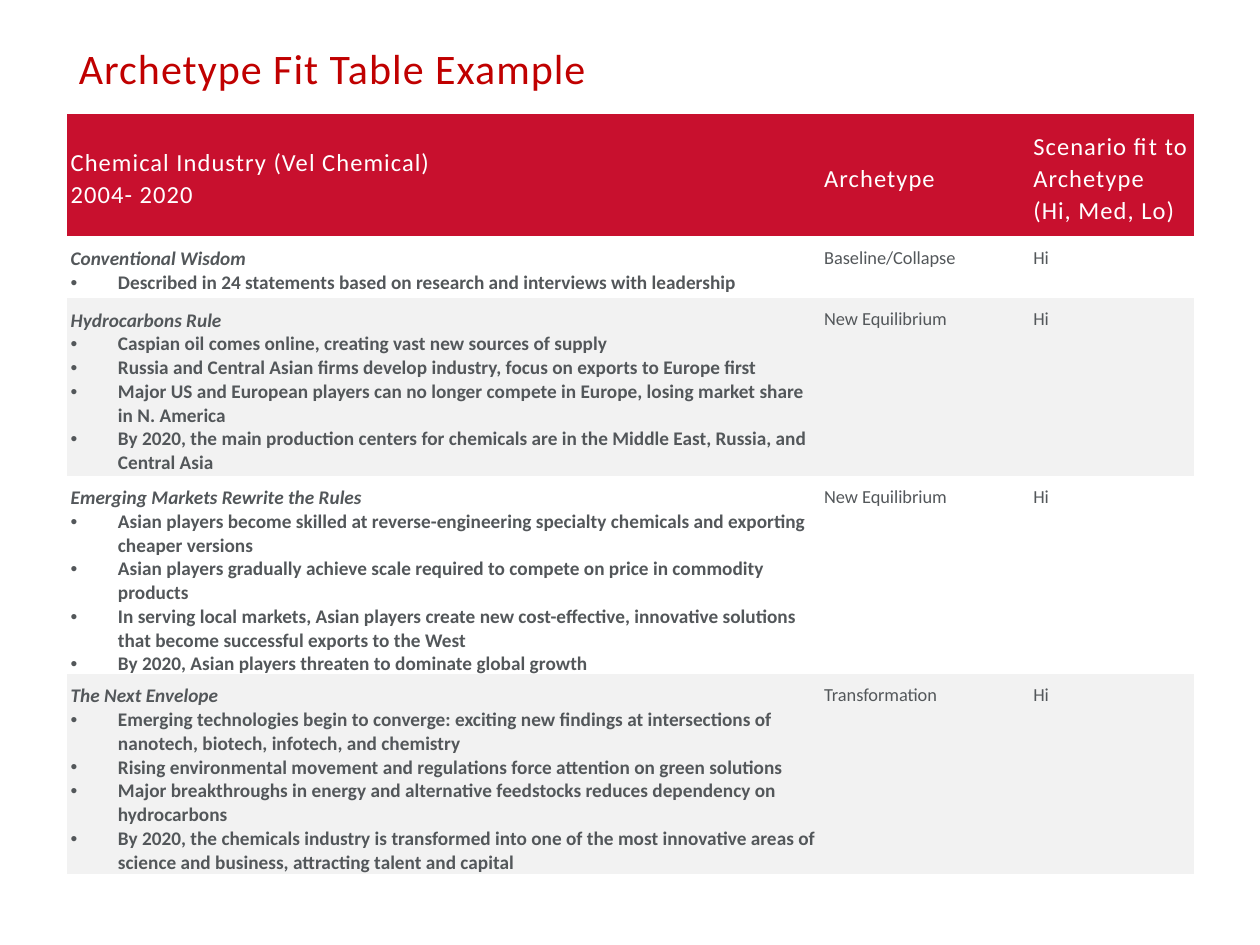
"""Build the archetype fit table slide."""
from copy import deepcopy
from dataclasses import dataclass

from lxml import etree
from pptx import Presentation
from pptx.dml.color import RGBColor
from pptx.enum.text import MSO_ANCHOR
from pptx.oxml.ns import qn
from pptx.util import Pt

MIDDLE = MSO_ANCHOR.MIDDLE
TOP = MSO_ANCHOR.TOP
PLAIN = "{2D5ABB26-0587-4C30-8999-92F81FD0307C}"


@dataclass(frozen=True)
class Theme:
    font: str = "Calibri"
    title: str = "C00000"
    head: str = "C8102E"
    light: str = "FFFFFF"
    ink: str = "53575A"
    band: str = "F2F2F2"
    big: float = 24
    mid: float = 14
    body: float = 11
    small: float = 10.5
    track: int = 60
    lead: float = 1.07
    indent: float = 27


@dataclass(frozen=True)
class Story:
    name: str
    points: tuple[str, ...]
    kind: str
    fit: str = "Hi"


THEME = Theme()
LEFT, WIDE = 38, 644.4
COLS = (430.6, 119.5, 94.3)
ROWS = (69.8, 35.3, 101.5, 101.5, 114.5)
HEADS = (
    ("Chemical Industry (Vel Chemical)\v2004- 2020",),
    ("Archetype",),
    ("Scenario fit to Archetype", "(Hi, Med, Lo)"),
)
STORIES = (
    Story("Conventional Wisdom", (
        "Described in 24 statements based on research and interviews with leadership",
    ), "Baseline/Collapse"),
    Story("Hydrocarbons Rule", (
        "Caspian oil comes online, creating vast new sources of supply",
        "Russia and Central Asian firms develop industry, focus on exports to Europe first",
        "Major US and European players can no longer compete in Europe, losing market share in N. America",
        "By 2020, the main production centers for chemicals are in the Middle East, Russia, and Central Asia",
    ), "New Equilibrium"),
    Story("Emerging Markets Rewrite the Rules", (
        "Asian players become skilled at reverse-engineering specialty chemicals and exporting cheaper versions",
        "Asian players gradually achieve scale required to compete on price in commodity products",
        "In serving local markets, Asian players create new cost-effective, innovative solutions "
        "that become successful exports to the West",
        "By 2020, Asian players threaten to dominate global growth",
    ), "New Equilibrium"),
    Story("The Next Envelope", (
        "Emerging technologies begin to converge: exciting new findings at intersections of "
        "nanotech, biotech, infotech, and chemistry",
        "Rising environmental movement and regulations force attention on green solutions",
        "Major breakthroughs in energy and alternative feedstocks reduces dependency on hydrocarbons",
        "By 2020, the chemicals industry is transformed into one of the most innovative areas of "
        "science and business, attracting talent and capital",
    ), "Transformation"),
)


def write(frame, text: str, *, size: float, color: str = THEME.ink, bold: bool = False,
          italic: bool = False, track: int = 0, lead: float | None = None,
          bullet: bool = False) -> None:
    para = frame.paragraphs[0]
    if para.runs:
        para = frame.add_paragraph()
    para.text = text
    if lead:
        para.line_spacing = lead
    if bullet:
        props = para._p.get_or_add_pPr()
        step = Pt(THEME.indent)
        props.set("marL", str(step))
        props.set("indent", str(-step))
        etree.SubElement(props, qn("a:buFont")).set("typeface", "Arial")
        etree.SubElement(props, qn("a:buChar")).set("char", "•")
    for run in para.runs:
        font = run.font
        font.name, font.size = THEME.font, Pt(size)
        font.bold, font.italic = bold, italic
        font.color.rgb = RGBColor.from_string(color)
        run._r.get_or_add_rPr().set("spc", str(track))
    for gap in para._p.findall(qn("a:br")):
        gap.insert(0, deepcopy(para.runs[0]._r.get_or_add_rPr()))


def dress(cell, fill: str | None, anchor: MSO_ANCHOR = TOP) -> None:
    cell.margin_left, cell.margin_top = Pt(2.4), Pt(5)
    cell.margin_right, cell.margin_bottom = Pt(0.8), Pt(1.6)
    cell.vertical_anchor = anchor
    if fill:
        cell.fill.solid()
        cell.fill.fore_color.rgb = RGBColor.from_string(fill)
    else:
        cell.fill.background()


def draw_title(slide) -> None:
    frame = slide.shapes.add_textbox(Pt(LEFT), Pt(0), Pt(WIDE), Pt(77.8)).text_frame
    frame.word_wrap = True
    frame.vertical_anchor = MIDDLE
    write(frame, "Archetype Fit Table Example", size=THEME.big, color=THEME.title,
          track=THEME.track)


def draw_head(table) -> None:
    for col, lines in enumerate(HEADS):
        cell = table.cell(0, col)
        dress(cell, THEME.head, MIDDLE)
        for line in lines:
            write(cell.text_frame, line, size=THEME.mid, color=THEME.light,
                  track=THEME.track, lead=THEME.lead)


def draw_story(table, row: int, story: Story) -> None:
    cells = [table.cell(row, col) for col in range(len(COLS))]
    for cell in cells:
        dress(cell, None if row % 2 else THEME.band)
    frame = cells[0].text_frame
    write(frame, story.name, size=THEME.body, bold=True, italic=True, lead=THEME.lead)
    for point in story.points:
        write(frame, point, size=THEME.body, bold=True, bullet=True)
    for cell, text in zip(cells[1:], (story.kind, story.fit)):
        write(cell.text_frame, text, size=THEME.small, lead=THEME.lead)


def draw_table(slide) -> None:
    table = slide.shapes.add_table(len(ROWS), len(COLS), Pt(LEFT), Pt(65.3),
                                   Pt(WIDE), Pt(sum(ROWS))).table
    table.first_row = table.horz_banding = False
    table._tbl.tblPr.find(qn("a:tableStyleId")).text = PLAIN
    for col, width in zip(table.columns, COLS):
        col.width = Pt(width)
    for row, height in zip(table.rows, ROWS):
        row.height = Pt(height)
    draw_head(table)
    for row, story in enumerate(STORIES, 1):
        draw_story(table, row, story)


def main() -> None:
    deck = Presentation()
    deck.slide_width, deck.slide_height = Pt(720), Pt(540)
    slide = deck.slides.add_slide(deck.slide_layouts[6])
    draw_title(slide)
    draw_table(slide)
    deck.save("out.pptx")


if __name__ == "__main__":
    main()
